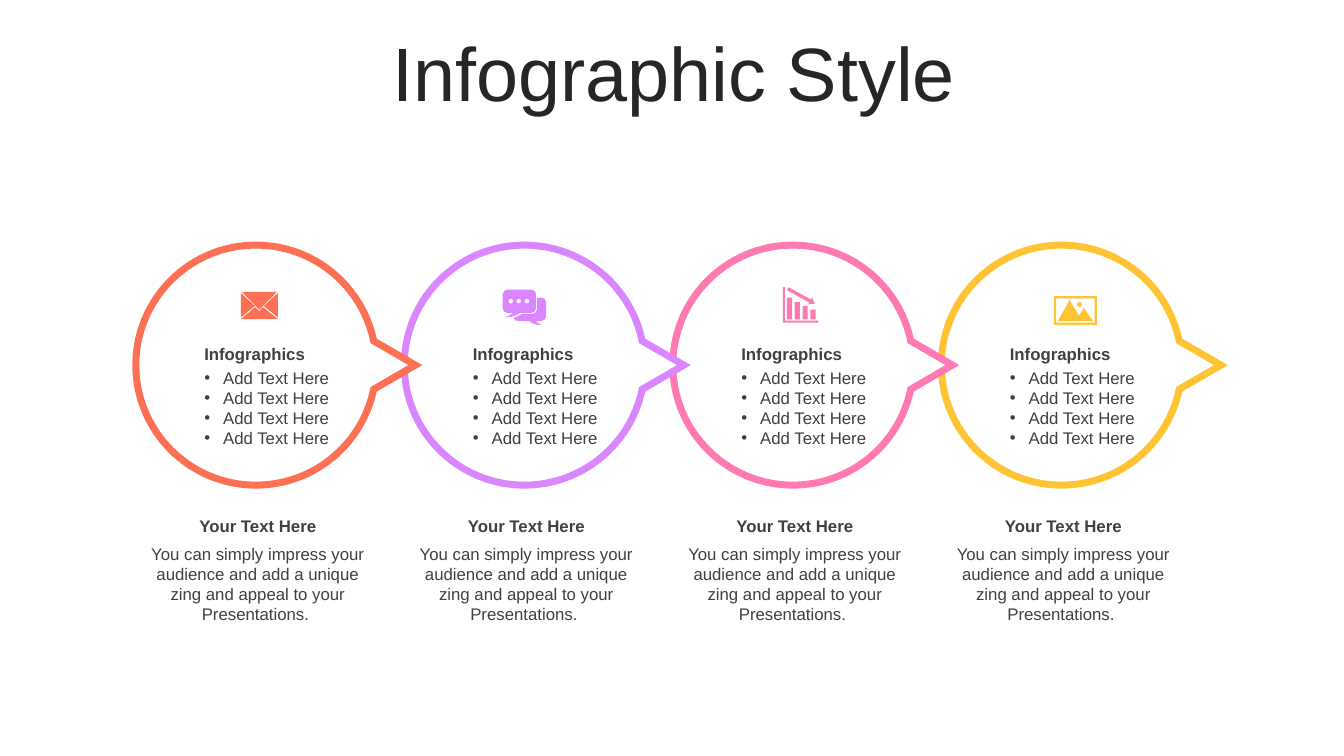
from lxml import etree
from pptx import Presentation
from pptx.dml.color import RGBColor
from pptx.enum import text as t
from pptx.oxml import ns
from pptx.util import Pt

ORANGE = RGBColor(0xFE, 0x70, 0x54)
PURPLE = RGBColor(0xDA, 0x87, 0xFF)
PINK = RGBColor(0xFF, 0x79, 0xB2)
YELLOW = RGBColor(0xFE, 0xC4, 0x34)
WHITE = RGBColor(0xFF, 0xFF, 0xFF)
TITLE_COLOR = RGBColor(0x26, 0x26, 0x26)
BODY_COLOR = RGBColor(0x40, 0x40, 0x40)

TITLE = "Infographic Style"
LABEL = "Infographics"
BULLETS = ["Add Text Here"] * 4
CAPTION = "Your Text Here"
DESCRIPTION = ("You can simply impress your audience and add a unique "
               "zing and appeal to your Presentations. ")

FIRST_CENTER_X, CENTER_Y, PITCH = 182.7, 260.8, 191.8


def quarter(x, y, corner_x, corner_y, end_x, end_y, k=0.552):
    return (x + k * (corner_x - x), y + k * (corner_y - y),
            end_x + k * (corner_x - end_x), end_y + k * (corner_y - end_y), end_x, end_y)


def disc(x, y, r):
    return [(x + r, y),
            quarter(x + r, y, x + r, y + r, x, y + r),
            quarter(x, y + r, x - r, y + r, x - r, y),
            quarter(x - r, y, x - r, y - r, x, y - r),
            quarter(x, y - r, x + r, y - r, x + r, y)]


def box(left, top, right, bottom):
    return [(left, top), (right, top), (right, bottom), (left, bottom)]


BUBBLE = [
    (0, -85.7), (41.5, -85.7, 76.1, -56.5, 84.2, -17.3), (114, 0), (84.2, 17.3),
    (76.1, 56.5, 41.5, 85.7, 0, 85.7),
    quarter(0, 85.7, -85.7, 85.7, -85.7, 0),
    quarter(-85.7, 0, -85.7, -85.7, 0, -85.7),
]
ENVELOPE = [
    [(15.8, 11), (26.4, 19.5), (0, 19.5), (10.1, 11), (13.2, 13.9)],
    [(26.4, 0.8), (26.4, 18.2), (16.4, 10.2)],
    [(0, 0.8), (10, 10.2), (0, 18.2)],
    [(0.7, 0), (25.7, 0), (13.2, 12.8)],
]
CHAT = [disc(x, 8.3, 1.7) for x in (17.3, 11.5, 5.8)] + [
    [(24.6, 5.7), (27.7, 5.7), quarter(27.7, 5.7, 31, 5.7, 31, 9), (31, 19.1),
     quarter(31, 19.1, 31, 22.4, 27.7, 22.4), (23.8, 22.4),
     (24.5, 23.2, 24.4, 23.6, 28.1, 25.4), (22.5, 25.2, 21.5, 24.4, 18.8, 22.4),
     (11, 22.4), (9.4, 22.4, 8.1, 21.6, 7.9, 20.2), (10, 19.5, 11.7, 18.6, 13.7, 17.3),
     (21.3, 17.3), quarter(21.3, 17.3, 24.6, 17.3, 24.6, 14)],
    [(3.3, 0), (20.6, 0), quarter(20.6, 0, 23.9, 0, 23.9, 3.3), (23.9, 13.3),
     quarter(23.9, 13.3, 23.9, 16.6, 20.6, 16.6), (12.4, 16.6),
     (8.7, 19, 7.2, 19.6, 1.4, 20), (5.1, 18.3, 5.2, 18.8, 7.2, 16.6), (3.3, 16.6),
     quarter(3.3, 16.6, 0, 16.6, 0, 13.3), (0, 3.3), quarter(0, 3.3, 0, 0, 3.3, 0)],
]
FALLING_CHART = [
    box(2.9 + 5.6 * i, top, 6.6 + 5.6 * i, 23)
    for i, top in enumerate((7.5, 10.5, 13.4, 16.1))
] + [
    [(4.3, 0.2), (20.2, 8.9), (21, 7.4), (22.7, 11.9), (18, 12.4), (18.9, 11), (3, 2.2)],
    [(0, 0), (1.4, 0), (1.4, 24), (25.4, 24), (25.4, 25.4), (0, 25.4)],
]
PHOTO = [
    disc(18.4, 6, 1.8),
    [(11.3, 2.8), (18, 14), (21.4, 8.4), (28, 17.8), (2.9, 17.8)],
    box(1.7, 1.7, 29.1, 18.9),
    box(0, 0, 30.8, 20.6),
]

STEPS = [
    (ORANGE, ENVELOPE, -10.6, 208.5),
    (PURPLE, CHAT, -15.4, 206.9),
    (PINK, FALLING_CHART, -7.1, 205.1),
    (YELLOW, PHOTO, -5.4, 211.5),
]

presentation = Presentation()
presentation.slide_width, presentation.slide_height = Pt(960), Pt(540)
slide = presentation.slides.add_slide(presentation.slide_layouts[6])


def add_outline(contours, left, top, fill):
    def place(x, y):
        return Pt(left + x), Pt(top + y)

    builder = slide.shapes.build_freeform(*place(*contours[0][0]))
    for i, contour in enumerate(contours):
        if i:
            builder.move_to(*place(*contour[0]))
        builder.add_line_segments([place(*point[-2:]) for point in contour[1:]], close=True)
    shape = builder.convert_to_shape()
    points = [point for contour in contours for point in contour[1:]]
    for segment, point in zip(list(shape._element.iter(ns.qn("a:lnTo"))), points):
        if len(point) == 6:
            segment.tag = ns.qn("a:cubicBezTo")
            for i in (0, 2):
                x, y = place(*point[i:i + 2])
                control = etree.Element(ns.qn("a:pt"), x=str(x - shape.left), y=str(y - shape.top))
                segment.insert(i // 2, control)
    shape.shadow.inherit = False
    shape.fill.solid()
    shape.fill.fore_color.rgb = fill
    shape.line.fill.background()
    return shape


def add_text(lines, left, top, width, height, size=12, color=BODY_COLOR, bold=False,
             align=t.PP_ALIGN.CENTER, anchor=t.MSO_ANCHOR.TOP, inset=7.2,
             bullets=False, spacing=None, grow=t.MSO_AUTO_SIZE.SHAPE_TO_FIT_TEXT):
    frame = slide.shapes.add_textbox(Pt(left), Pt(top), Pt(width), Pt(height)).text_frame
    frame.word_wrap = True
    frame.auto_size = grow
    frame.vertical_anchor = anchor
    frame.margin_left = Pt(inset)
    frame.text = "\n".join(lines)
    for paragraph in frame.paragraphs:
        paragraph.alignment = align
        paragraph.line_spacing = spacing
        if bullets:
            properties = paragraph._p.get_or_add_pPr()
            properties.set("marL", str(Pt(13.5)))
            properties.set("indent", str(-Pt(13.5)))
            etree.SubElement(properties, ns.qn("a:buFont")).set("typeface", "Arial")
            etree.SubElement(properties, ns.qn("a:buChar")).set("char", "•")
        font = paragraph.font
        font.name, font.size, font.bold = "Arial", Pt(size), bold
        font.color.rgb = color


add_text([TITLE], 25.5, 26.6, 911.5, 56.9, size=54, color=TITLE_COLOR,
         anchor=t.MSO_ANCHOR.MIDDLE, spacing=0.9, grow=t.MSO_AUTO_SIZE.NONE)

centers = [FIRST_CENTER_X + PITCH * i for i in range(len(STEPS))]
columns = list(zip(centers, STEPS))
inside = dict(align=t.PP_ALIGN.LEFT, anchor=t.MSO_ANCHOR.MIDDLE, inset=14.4)

for center, (color, icon, icon_offset, icon_top) in reversed(columns):
    outline = add_outline([BUBBLE], center, CENTER_Y, WHITE)
    outline.line.color.rgb = color
    outline.line.width = Pt(5)
    miter = etree.SubElement(outline.line._get_or_add_ln(), ns.qn("a:miter"))
    miter.set("lim", "800000")
    add_text([LABEL], center - 51.2, 242, 121.7, 21.8, bold=True, **inside)
    add_text(BULLETS, center - 51.2, 258.4, 121.7, 65.4, bullets=True, **inside)

for center, (color, icon, icon_offset, icon_top) in columns:
    add_text([CAPTION], center - 84.9, 364.8, 172.8, 21.8, bold=True)
    add_text([DESCRIPTION], center - 84.9, 384.8, 172.8, 65.4)
    add_outline(icon, center + icon_offset, icon_top, color)

presentation.save("out.pptx")
